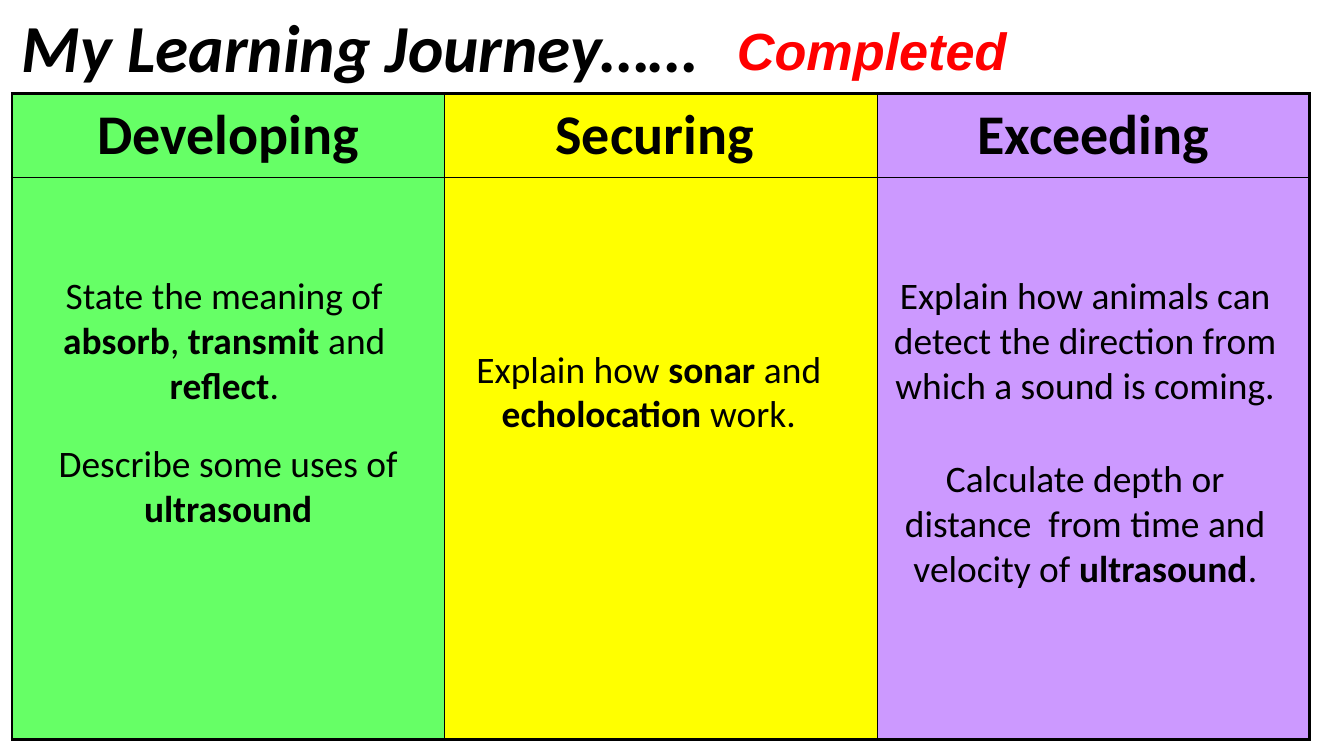
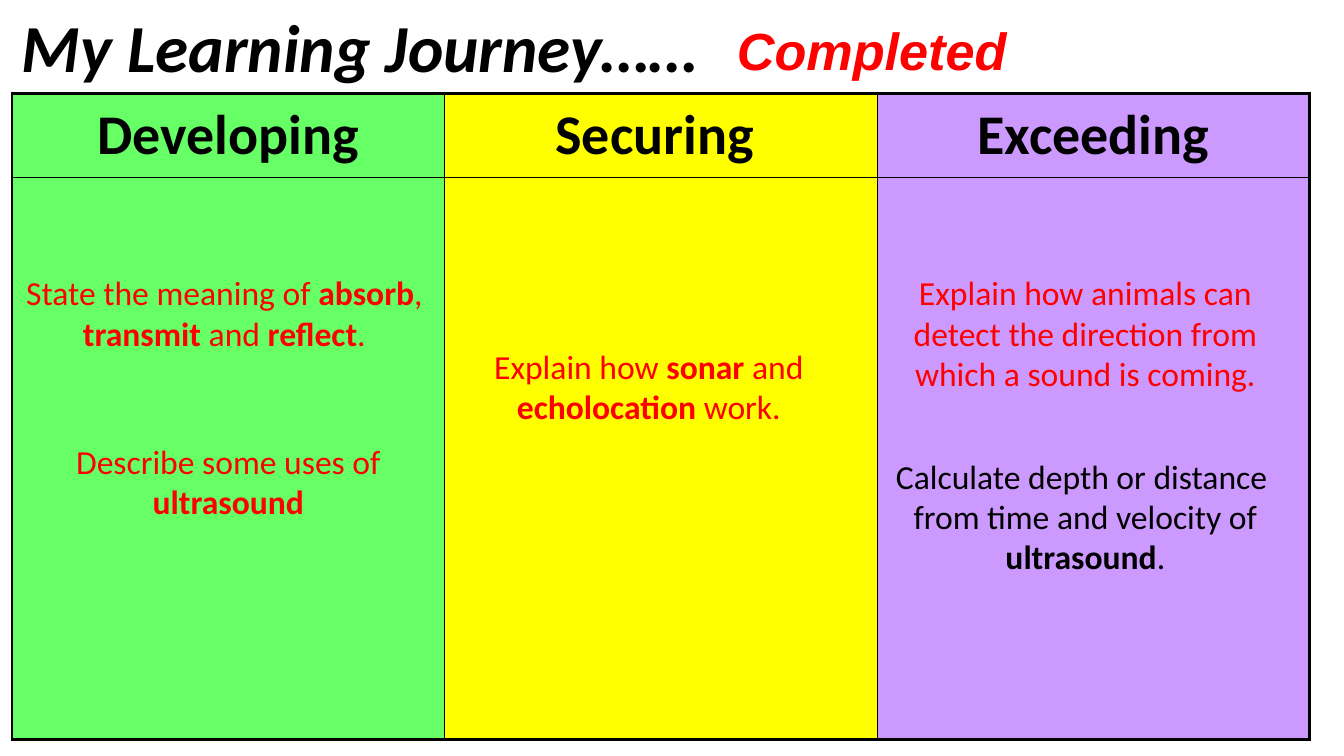
from lxml.etree import SubElement
from pptx import Presentation
from pptx.dml.color import RGBColor
from pptx.enum.text import MSO_ANCHOR, PP_ALIGN
from pptx.oxml.ns import qn
from pptx.util import Inches, Pt

COLORS = {
    "black": "000000",
    "red": "FF0000",
    "green": "66FF66",
    "yellow": "FFFF00",
    "purple": "CC99FF",
}
LEVELS = [("Developing", "green"), ("Securing ", "yellow"), ("Exceeding", "purple")]
JOURNEY_BOX = (0.12, 0.93, 12.87, 6.41)
HEADER_HEIGHT = 0.83
GOAL_WIDTH = 4.21
OUTER_LINE, INNER_LINE = 2.25, 1

# Goals: offset from the table corner, height per slide, text (** marks key words)
GOALS = [
    (0, 1.72, (1.76, 1.21), "State the meaning of **absorb**, **transmit** and **reflect**."),
    (4.21, 2.45, (1, 0.91), "Explain how **sonar** and **echolocation** work."),
    (8.54, 1.72, (1.45, 1.31),
     "Explain how animals can detect the direction from which a sound is coming."),
    (0.04, 3.39, (1.31, 1.21), "Describe some uses of **ultrasound**"),
    (8.54, 3.54, (1.45, 1.31),
     "Calculate depth or distance  from time and velocity of **ultrasound**."),
]

# Goal text size and colours on each slide
SLIDES = [
    (26.7, ["black"] * 5),
    (24, ["red"] * 4 + ["black"]),
]


def write_text(frame, text, size, color="black", font="Calibri",
               bold=False, italic=False, align=PP_ALIGN.LEFT):
    """Write one paragraph; parts between ** are bold."""
    frame.word_wrap = True
    paragraph = frame.paragraphs[0]
    paragraph.alignment = align
    for index, part in enumerate(text.split("**")):
        if not part:
            continue
        run = paragraph.add_run()
        run.text = part
        run.font.name = font
        run.font.size = Pt(size)
        run.font.bold = bold or index % 2 == 1
        run.font.italic = italic
        run.font.color.rgb = RGBColor.from_string(COLORS[color])


def add_text(slide, box, text, **text_format):
    label = slide.shapes.add_textbox(*map(Inches, box))
    write_text(label.text_frame, text, **text_format)


def set_borders(cell, widths):
    """Draw left, right, top and bottom borders, which precede the fill."""
    properties = cell._tc.get_or_add_tcPr()
    for position, (side, width) in enumerate(zip("LRTB", widths)):
        line = SubElement(properties, qn(f"a:ln{side}"), w=str(Pt(width)))
        fill = SubElement(line, qn("a:solidFill"))
        SubElement(fill, qn("a:srgbClr"), val=COLORS["black"])
        properties.insert(position, line)


def add_heading(slide):
    add_text(slide, (0.12, 0, 9.57, 1.85), "My Learning Journey……",
             size=48, bold=True, italic=True)


def add_status(slide):
    add_text(slide, (7.21, 0.13, 3.64, 0.73), "Completed",
             size=37.3, color="red", font="Arial", bold=True, italic=True)


def add_level_table(slide, box):
    left, top, width, height = box
    last = len(LEVELS) - 1
    levels = slide.shapes.add_table(2, len(LEVELS), *map(Inches, box)).table
    levels.first_row = levels.horz_banding = False
    levels.rows[0].height = Inches(HEADER_HEIGHT)
    levels.rows[1].height = Inches(height - HEADER_HEIGHT)
    for column, (level, color) in enumerate(LEVELS):
        levels.columns[column].width = Inches(width / len(LEVELS))
        for row in range(2):
            cell = levels.cell(row, column)
            cell.fill.solid()
            cell.fill.fore_color.rgb = RGBColor.from_string(COLORS[color])
            outer_sides = (column == 0, column == last, row == 0, row == 1)
            set_borders(cell, [OUTER_LINE if outer else INNER_LINE
                               for outer in outer_sides])
        header = levels.cell(0, column)
        header.vertical_anchor = MSO_ANCHOR.MIDDLE
        write_text(header.text_frame, level, size=40, bold=True,
                   align=PP_ALIGN.CENTER)


def add_goals(slide, box, number, size, colors):
    left, top = box[:2]
    for (dx, dy, heights, goal), color in zip(GOALS, colors):
        add_text(slide, (left + dx, top + dy, GOAL_WIDTH, heights[number]), goal,
                 size=size, color=color, align=PP_ALIGN.CENTER)


def add_journey_slide(deck, number, size, colors):
    slide = deck.slides.add_slide(deck.slide_layouts[6])
    add_heading(slide)
    add_level_table(slide, JOURNEY_BOX)
    add_goals(slide, JOURNEY_BOX, number, size, colors)
    add_status(slide)


def main():
    deck = Presentation()
    deck.slide_width, deck.slide_height = Inches(13.33), Inches(7.5)
    for number, (size, colors) in enumerate(SLIDES):
        add_journey_slide(deck, number, size, colors)
    deck.save("out.pptx")


if __name__ == "__main__":
    main()
